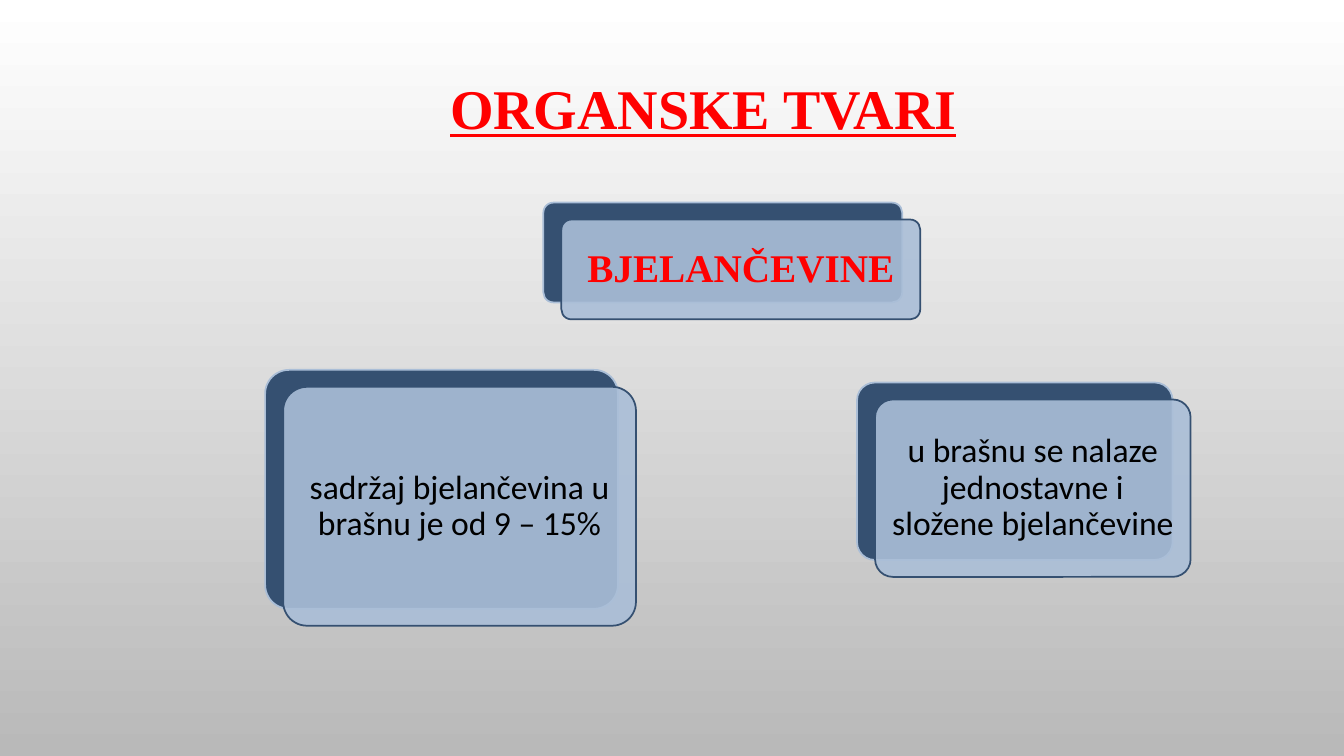
from lxml import etree
from pptx import Presentation
from pptx import util as u
from pptx.dml.color import RGBColor
from pptx.enum import shapes, text
from pptx.oxml.ns import qn

WIDTH, HEIGHT = u.Inches(13.33), u.Inches(7.5)
WHITE = RGBColor(0xFF, 0xFF, 0xFF)
GREY = RGBColor(0xB9, 0xB9, 0xB9)
RED = RGBColor(0xFF, 0x00, 0x00)
BLACK = RGBColor(0x00, 0x00, 0x00)
NAVY = RGBColor(0x35, 0x50, 0x71)
PALE = RGBColor(0xAA, 0xBE, 0xD7)
SERIF, SANS = "Times New Roman", "Calibri"
SHIFT_X, SHIFT_Y = 1.34, 2.24


def area(left, top, width, height):
    return (int(WIDTH * left / 100), int(HEIGHT * top / 100),
            int(WIDTH * width / 100), int(HEIGHT * height / 100))


def set_background(slide):
    fill = slide.background.fill
    fill.gradient()
    fill.gradient_angle = 270
    for stop, position, color in zip(fill.gradient_stops, (0, 1), (WHITE, GREY)):
        stop.position = position
        stop.color.rgb = color


def write(tf, wording, size, font, color, bold=False, underline=False):
    tf.word_wrap = True
    tf.auto_size = text.MSO_AUTO_SIZE.NONE
    tf.vertical_anchor = text.MSO_ANCHOR.MIDDLE
    p = tf.paragraphs[0]
    p.alignment = text.PP_ALIGN.CENTER
    p.line_spacing = 0.9
    r = p.add_run()
    r.text = wording
    r.font.size = u.Pt(size)
    r.font.name = font
    r.font.color.rgb = color
    r.font.bold = bold
    r.font.underline = underline


def add_title(slide, wording):
    sp = slide.shapes.title
    sp.left, sp.top, sp.width, sp.height = area(12, 6.67, 80.65, 16.13)
    write(sp.text_frame, wording, 40, SERIF, RED, bold=True, underline=True)


def add_panel(slide, place, fill, line):
    sp = slide.shapes.add_shape(
        shapes.MSO_SHAPE.ROUNDED_RECTANGLE, *area(*place))
    sp.adjustments[0] = 0.1
    sp.shadow.inherit = False
    sp.fill.solid()
    sp.fill.fore_color.rgb = fill
    sp.line.color.rgb = line
    sp.line.width = u.Pt(1.25)
    return sp


def set_opacity(sp, percent):
    color = sp._element.spPr.find(qn("a:solidFill")).find(qn("a:srgbClr"))
    etree.SubElement(color, qn("a:alpha")).set("val", str(percent * 1000))


def add_card(slide, place, inset, wording, *style):
    left, top, width, height = place
    add_panel(slide, place, NAVY, PALE)
    sp = add_panel(slide, (left + SHIFT_X, top + SHIFT_Y, width, height),
                   PALE, NAVY)
    set_opacity(sp, 90)
    tf = sp.text_frame
    tf.margin_left = tf.margin_right = u.Inches(inset)
    tf.margin_top = tf.margin_bottom = u.Inches(inset)
    write(tf, wording, *style)


def main():
    prs = Presentation()
    prs.slide_width, prs.slide_height = WIDTH, HEIGHT
    slide = prs.slides.add_slide(prs.slide_layouts[5])
    set_background(slide)
    add_title(slide, "ORGANSKE TVARI")
    add_card(slide, (40.43, 26.8, 26.7, 13.2), 0.12,
             "BJELANČEVINE", 28, SERIF, RED, True)
    add_card(slide, (19.73, 48.93, 26.25, 31.6), 0.1,
             "sadržaj bjelančevina u brašnu je od 9 – 15%", 24, SANS, BLACK)
    add_card(slide, (63.77, 50.6, 23.48, 23.47), 0.1,
             "u brašnu se nalaze jednostavne i složene bjelančevine",
             24, SANS, BLACK)
    prs.save("out.pptx")


if __name__ == "__main__":
    main()
